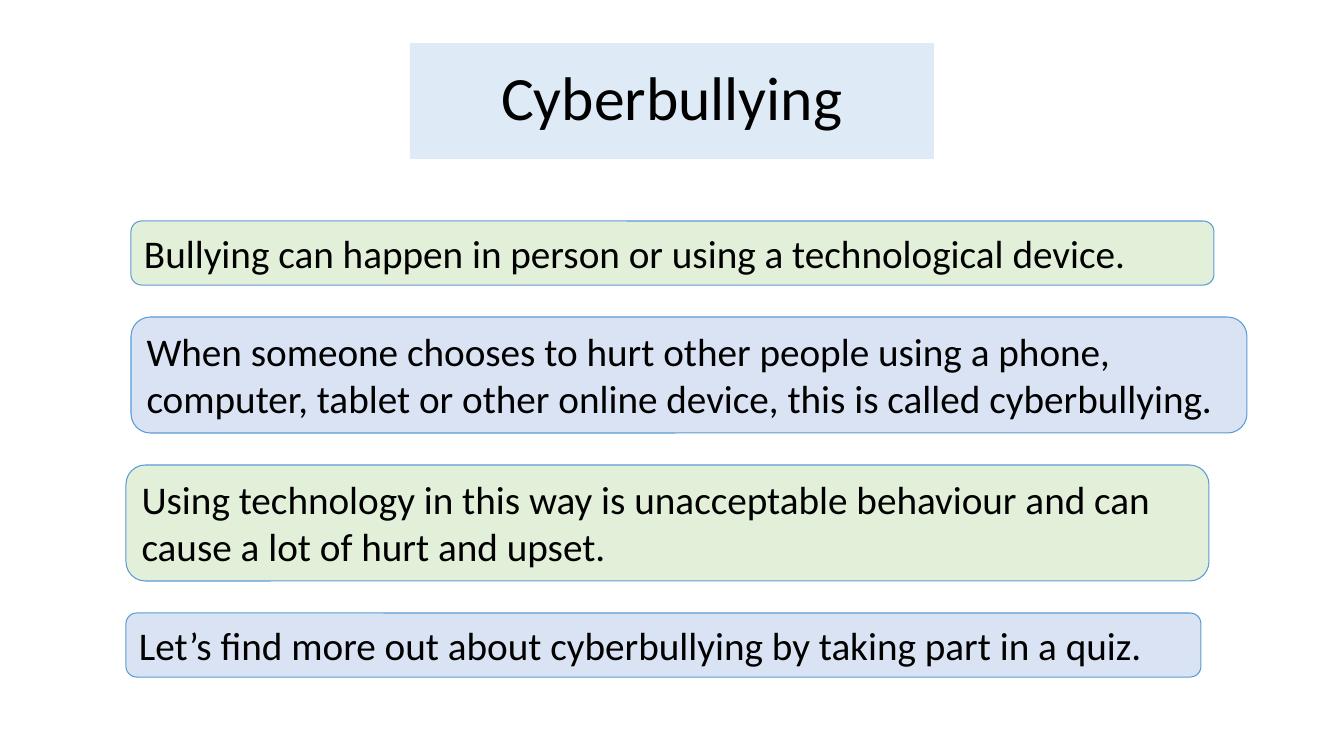
from pptx import Presentation
from pptx.dml.color import RGBColor
from pptx.enum import shapes, text
from pptx.util import Pt

TITLE = "Cyberbullying"
FACTS = [
    ("Bullying can happen in person or using a technological device.", 131, 1083, 1),
    ("When someone chooses to hurt other people using a phone, computer, "
     "tablet or other online device, this is called cyberbullying.", 131, 1116, 2),
    ("Using technology in this way is unacceptable behaviour and can "
     "cause a lot of hurt and upset.", 126, 1083, 2),
    ("Let’s find more out about cyberbullying by taking part in a quiz.", 126, 1075, 1),
]

BLACK = RGBColor(0x00, 0x00, 0x00)
SKY = RGBColor(0xDE, 0xEB, 0xF7)
GREEN = RGBColor(0xE2, 0xF0, 0xD9)
BLUE = RGBColor(0xDA, 0xE3, 0xF3)
EDGE = RGBColor(0x5B, 0x9B, 0xD5)

SCALE = 914400 / 100.8
TOP, GAP = 221, 32
HEIGHTS = {1: 64, 2: 116}


def px(n):
    return round(n * SCALE)


def paint(shape, color):
    shape.fill.solid()
    shape.fill.fore_color.rgb = color


def write(shape, words, size, align, anchor):
    frame = shape.text_frame
    frame.word_wrap = True
    frame.vertical_anchor = anchor
    frame.text = words
    para = frame.paragraphs[0]
    para.alignment = align
    para.font.name = "Calibri"
    para.font.size = Pt(size)
    para.font.color.rgb = BLACK
    return para


def add_title(slide):
    title = slide.shapes.title
    title.left, title.top, title.width, title.height = map(px, (410, 43, 524, 116))
    paint(title, SKY)
    para = write(title, TITLE, 44, text.PP_ALIGN.CENTER, text.MSO_ANCHOR.MIDDLE)
    para.line_spacing = 0.9


def add_facts(slide):
    top = TOP
    for i, (words, left, width, lines) in enumerate(FACTS):
        height = HEIGHTS[lines]
        box = slide.shapes.add_shape(
            shapes.MSO_SHAPE.ROUNDED_RECTANGLE,
            px(left), px(top), px(width), px(height))
        box.shadow.inherit = False
        paint(box, (GREEN, BLUE)[i % 2])
        box.line.color.rgb = EDGE
        box.line.width = Pt(0.75)
        write(box, words, 28, text.PP_ALIGN.LEFT, text.MSO_ANCHOR.TOP)
        box.text_frame.auto_size = text.MSO_AUTO_SIZE.SHAPE_TO_FIT_TEXT
        top += height + GAP


def main():
    deck = Presentation()
    deck.slide_width, deck.slide_height = px(1344), px(756)
    slide = deck.slides.add_slide(deck.slide_layouts[5])
    add_title(slide)
    add_facts(slide)
    deck.save("out.pptx")


if __name__ == "__main__":
    main()
